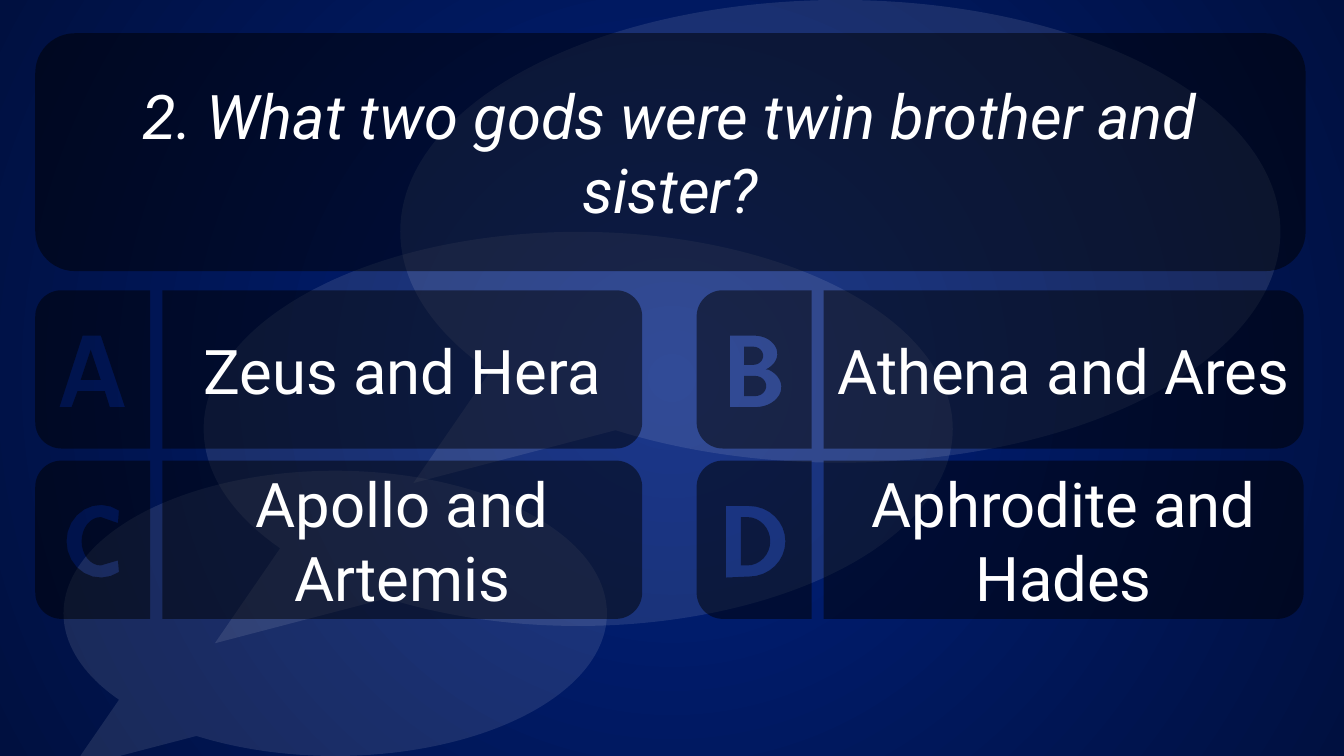
"""Build a quiz slide with one question and four lettered answers over speech bubbles."""
import math
from dataclasses import dataclass

from lxml import etree
from pptx import Presentation
from pptx import util as u
from pptx.dml.color import RGBColor
from pptx.enum import shapes, text
from pptx.oxml import ns


@dataclass(frozen=True)
class Theme:
    center: RGBColor = RGBColor.from_string("00217F")
    edge: RGBColor = RGBColor.from_string("001040")
    bubble: RGBColor = RGBColor.from_string("FFFFFF")
    panel: RGBColor = RGBColor.from_string("000000")
    words: RGBColor = RGBColor.from_string("FFFFFF")
    font: str = "Roboto"
    size: u.Pt = u.Pt(44)


theme = Theme()


def tint(shape, color, opacity):
    shape.shadow.inherit = False
    shape.line.fill.background()
    shape.fill.solid()
    shape.fill.fore_color.rgb = color
    color_element = shape.element.spPr.find(ns.qn("a:solidFill"))[0]
    etree.SubElement(color_element, ns.qn("a:alpha"), val=str(opacity * 1000))


def write(shape, words, italic=False):
    frame = shape.text_frame
    frame.text = words
    frame.word_wrap = True
    frame.auto_size = text.MSO_AUTO_SIZE.NONE
    frame.vertical_anchor = text.MSO_ANCHOR.MIDDLE
    paragraph = frame.paragraphs[0]
    paragraph.alignment = text.PP_ALIGN.CENTER
    paragraph.font.name = theme.font
    paragraph.font.size = theme.size
    paragraph.font.color.rgb = theme.words
    paragraph.font.italic = italic


presentation = Presentation()
presentation.slide_width = u.Inches(13.33)
presentation.slide_height = u.Inches(7.5)
slide = presentation.slides.add_slide(presentation.slide_layouts[5])

background = slide.background.fill
background.gradient()
for stop, color in zip(background.gradient_stops, (theme.center, theme.edge)):
    stop.color.rgb = color
gradient = slide.element.find(".//" + ns.qn("a:gradFill"))
gradient.remove(gradient.find(ns.qn("a:lin")))
circle = etree.SubElement(gradient, ns.qn("a:path"), path="circle")
etree.SubElement(circle, ns.qn("a:fillToRect"), dict.fromkeys("ltrb", "50000"))

bubbles = slide.shapes.add_group_shape()
for box in ((0.63, 4.67, 5.39, 2.83), (2.02, 2.3, 7.43, 3.91), (3.97, 0, 8.73, 4.59)):
    bubble = bubbles.shapes.add_shape(shapes.MSO_SHAPE.OVAL_CALLOUT, *map(u.Inches, box))
    bubble.adjustments[0] = -0.485
    bubble.adjustments[1] = 0.544
    tint(bubble, theme.bubble, 10)

TAB, ANSWER, HEIGHT, RADIUS = 1.14, 4.76, 1.57, 0.26
LOW = HEIGHT - RADIUS
tab_outline = [(TAB, HEIGHT), (RADIUS, LOW, RADIUS, RADIUS, 90, 180),
               (RADIUS, RADIUS, RADIUS, RADIUS, 180, 270), (TAB, 0)]
answer_outline = [(0, 0), (ANSWER - RADIUS, RADIUS, RADIUS, RADIUS, -90, 0),
                  (ANSWER - RADIUS, LOW, RADIUS, RADIUS, 0, 90), (0, HEIGHT)]

letter_cutouts = {
    "A": [[(0.55, 0.59), (0.65, 0.89), (0.45, 0.89)],
          [(0.47, 0.45), (0.24, 1.16), (0.36, 1.16), (0.42, 1), (0.69, 1),
           (0.74, 1.16), (0.89, 1.16), (0.65, 0.45)]],
    "B": [[(0.47, 0.56), (0.56, 0.65, 0.1, 0.09, -90, 90), (0.47, 0.74)],
          [(0.47, 0.85), (0.58, 0.95, 0.11, 0.1, -90, 90), (0.47, 1.05)],
          [(0.33, 0.45), (0.57, 0.63, 0.23, 0.18, -90, 60),
           (0.58, 0.96, 0.26, 0.2, -60, 90), (0.33, 1.16)]],
    "C": [[(0.65, 0.8, 0.34, 0.36, -58, -302), (0.82, 0.99),
           (0.65, 0.8, 0.19, 0.24, 90, 270), (0.82, 0.62)]],
    "D": [[(0.44, 0.56), (0.5, 0.8, 0.23, 0.24, -90, 90), (0.44, 1.04)],
          [(0.29, 0.45), (0.52, 0.8, 0.36, 0.35, -90, 90), (0.29, 1.16)]],
}
answers = ("Zeus and Hera", "Athena and Ares", "Apollo and Artemis", "Aphrodite and Hades")

for index, (cutouts, answer) in enumerate(zip(letter_cutouts.values(), answers)):
    row, column = divmod(index, 2)
    left = 0.35 + column * 6.56
    top = 2.88 + row * 1.69
    for offset, contours, words in ((1.26, [answer_outline], answer),
                                    (0, [tab_outline, *cutouts], "")):
        outlines = []
        for contour in contours:
            points = []
            for x, y, *arc in contour:
                width, height, start, end = arc or (0, 0, 0, 0)
                steps = 16 if arc else 0
                for step in range(steps + 1):
                    angle = math.radians(start + (end - start) * step / max(steps, 1))
                    points.append((u.Inches(x + width * math.cos(angle)),
                                   u.Inches(y + height * math.sin(angle))))
            outlines.append(points)
        builder = slide.shapes.build_freeform(*outlines[0][0])
        builder.add_line_segments(outlines[0][1:])
        for cutout in outlines[1:]:
            builder.move_to(*cutout[0])
            builder.add_line_segments(cutout[1:])
        panel = builder.convert_to_shape(u.Inches(left + offset), u.Inches(top))
        tint(panel, theme.panel, 50)
        if words:
            write(panel, words)

question_panel = slide.shapes.add_shape(
    shapes.MSO_SHAPE.ROUNDED_RECTANGLE,
    u.Inches(0.35), u.Inches(0.33), u.Inches(12.6), u.Inches(2.36))
tint(question_panel, theme.panel, 50)

title = slide.shapes.title
title.left, title.top = u.Inches(0.47), u.Inches(0.33)
title.width, title.height = u.Inches(12.36), u.Inches(2.36)
write(title, "2. What two gods were twin brother and sister?", italic=True)
question_panel.element.addnext(title.element)

presentation.save("out.pptx")
